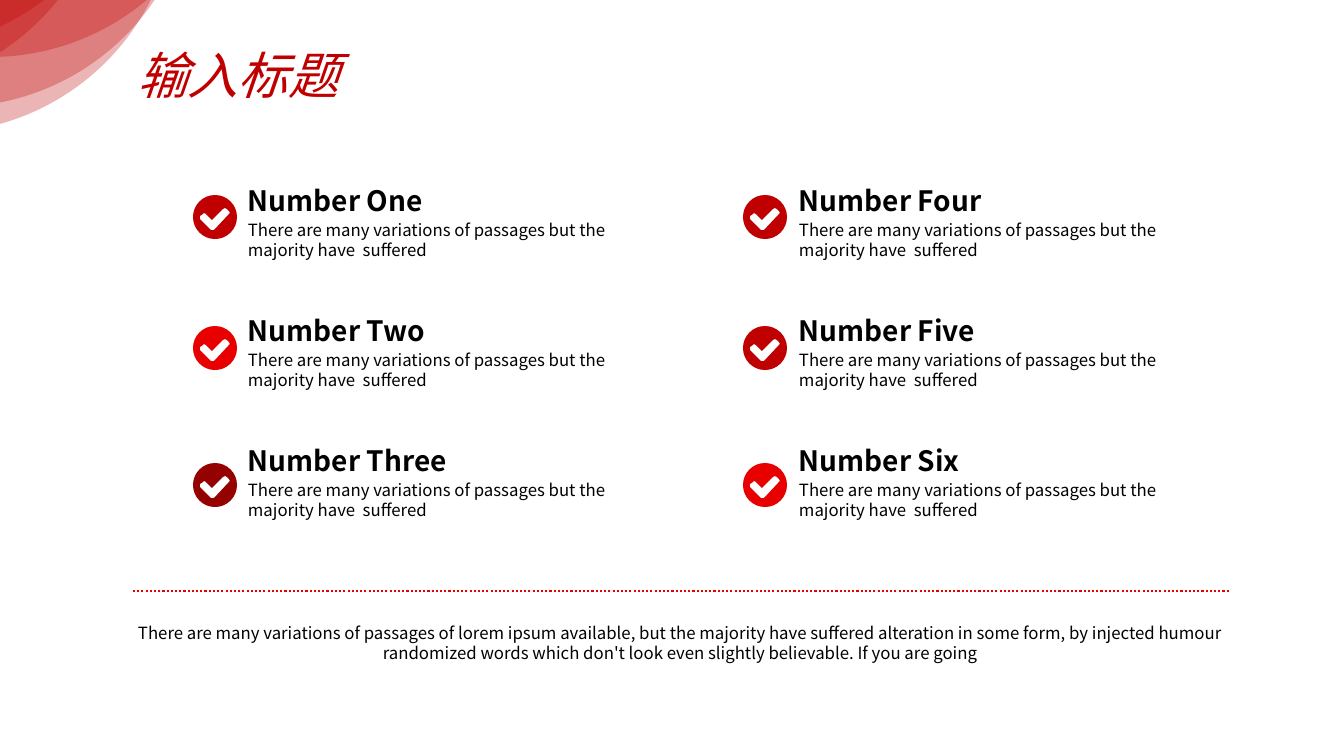
import math
from dataclasses import dataclass

from lxml import etree
from pptx import Presentation
from pptx import util as u
from pptx.dml.color import RGBColor
from pptx.enum import dml, shapes, text
from pptx.oxml.ns import qn

EMU_PER_PX = 914400 / 100.8
FONT = "Noto Sans CJK SC"
COLORS = {"red": "C00000", "bright": "E80000", "dark": "950101", "ink": "000000"}

PASSAGE = "There are many variations of passages but the majority have  suffered"
SUMMARY = (
    "There are many variations of passages of lorem ipsum available, but the majority "
    "have suffered alteration in some form, by injected humour randomized words which "
    "don't look even slightly believable. If you are going"
)

# Item grid, in px
HEADING_TOP, PASSAGE_TOP, ROW_PITCH = 183, 220, 130
ICON_TOPS = (195, 326, 463)
ICON_LEFTS = (193, 743)
COLUMN_LEFTS = (248, 799)
ICON_SIZE = 44
TICK = (
    (36, 16), (34, 14), (32, 13), (30, 14), (19, 25), (13, 19), (11, 18), (10, 19),
    (7, 21), (7, 24), (18, 35), (20, 35), (21, 35), (36, 19), (37, 18),
)

# Corner discs, in px
DISC_SIZE, DISC_OPACITY = 485, 29
DISC_CORNERS = ((-346, -435), (-252, -428), (-374, -394), (-289, -378), (-308, -352))


@dataclass(frozen=True)
class Item:
    heading: str
    column: int
    row: int
    color: str


@dataclass(frozen=True)
class Label:
    words: str
    left: int
    top: int
    width: int
    height: int
    size: int
    line_pt: float
    color: str = "ink"
    bold: bool = False
    italic: bool = False
    centered: bool = False


ITEMS = (
    Item("Number One", 0, 0, "red"),
    Item("Number Two", 0, 1, "bright"),
    Item("Number Three", 0, 2, "dark"),
    Item("Number Four", 1, 0, "red"),
    Item("Number Five", 1, 1, "red"),
    Item("Number Six", 1, 2, "bright"),
)


def px(length: float) -> u.Emu:
    return u.Emu(round(length * EMU_PER_PX))


def rgb(name: str) -> RGBColor:
    return RGBColor.from_string(COLORS[name])


def paint(shape, color: str) -> None:
    shape.shadow.inherit = False
    shape.fill.solid()
    shape.fill.fore_color.rgb = rgb(color)
    shape.line.fill.background()


def add_label(slide, label: Label) -> None:
    box = slide.shapes.add_textbox(
        px(label.left), px(label.top), px(label.width), px(label.height))
    frame = box.text_frame
    frame.word_wrap = True
    frame.margin_left = frame.margin_right = frame.margin_top = frame.margin_bottom = 0
    paragraph = frame.paragraphs[0]
    paragraph.text = label.words
    paragraph.line_spacing = u.Pt(label.line_pt)
    paragraph.alignment = text.PP_ALIGN.CENTER if label.centered else text.PP_ALIGN.LEFT
    font = paragraph.font
    font.name, font.size = FONT, u.Pt(label.size)
    font.bold, font.italic = label.bold, label.italic
    font.color.rgb = rgb(label.color)
    # East Asian glyphs need their own typeface entry
    for run in paragraph.runs:
        etree.SubElement(run._r.get_or_add_rPr(), qn("a:ea"), typeface=FONT)


def add_disc(slide, left: int, top: int) -> None:
    disc = slide.shapes.add_shape(
        shapes.MSO_SHAPE.OVAL, px(left), px(top), px(DISC_SIZE), px(DISC_SIZE))
    paint(disc, "red")
    color = disc._element.spPr.find(f"{qn('a:solidFill')}/{qn('a:srgbClr')}")
    etree.SubElement(color, qn("a:alpha"), val=str(DISC_OPACITY * 1000))


def rim_points(radius: float) -> list[tuple[int, int]]:
    """Start point, then two handles and an end point for each quarter circle."""
    handle = 4 / 3 * (math.sqrt(2) - 1)
    unit = [(1, 0)]
    for _ in range(4):
        x, y = unit[-1]
        unit += [(x - handle * y, y + handle * x), (handle * x - y, handle * y + x), (-y, x)]
    return [(px(radius + radius * x), px(radius + radius * y)) for x, y in unit]


def add_tick_icon(slide, left: int, top: int, color: str) -> None:
    """Draw a disc with a tick cut out of it."""
    rim = rim_points(ICON_SIZE / 2)
    tick = [(px(x), px(y)) for x, y in TICK]
    builder = slide.shapes.build_freeform(*rim[0])
    builder.add_line_segments(rim[1:])
    builder.move_to(*tick[0])
    builder.add_line_segments(tick[1:])
    icon = builder.convert_to_shape(px(left), px(top))
    paint(icon, color)

    # Join each three rim segments into one curve
    segments = list(icon._element.iter(qn("a:lnTo")))[:len(rim) - 1]
    for start in range(0, len(segments), 3):
        quarter = segments[start:start + 3]
        curve = etree.Element(qn("a:cubicBezTo"))
        quarter[0].addprevious(curve)
        for segment in quarter:
            curve.append(segment[0])
            segment.getparent().remove(segment)


def add_item(slide, item: Item) -> None:
    left = COLUMN_LEFTS[item.column]
    offset = item.row * ROW_PITCH
    add_tick_icon(slide, ICON_LEFTS[item.column], ICON_TOPS[item.row], item.color)
    add_label(slide, Label(item.heading, left, HEADING_TOP + offset, 210, 34, 20, 24, bold=True))
    add_label(slide, Label(PASSAGE, left, PASSAGE_TOP + offset, 369, 40, 12, 14.3))


def add_divider(slide) -> None:
    divider = slide.shapes.add_connector(
        shapes.MSO_CONNECTOR.STRAIGHT, px(133), px(591), px(1229), px(591))
    divider.line.color.rgb = rgb("bright")
    divider.line.width = u.Pt(1.5)
    divider.line.dash_style = dml.MSO_LINE.ROUND_DOT
    etree.SubElement(divider._element.spPr, qn("a:effectLst"))


def main() -> None:
    deck = Presentation()
    deck.slide_width, deck.slide_height = px(1344), px(756)
    slide = deck.slides.add_slide(deck.slide_layouts[6])

    # Items, divider and summary
    for item in ITEMS:
        add_item(slide, item)
    add_divider(slide)
    add_label(slide, Label(SUMMARY, 133, 623, 1095, 40, 12, 14.3, centered=True))

    # Corner and title
    for left, top in DISC_CORNERS:
        add_disc(slide, left, top)
    add_label(slide, Label("输入标题", 98, 44, 280, 61, 36, 43.2, "red",
                           italic=True, centered=True))

    deck.save("out.pptx")


if __name__ == "__main__":
    main()
